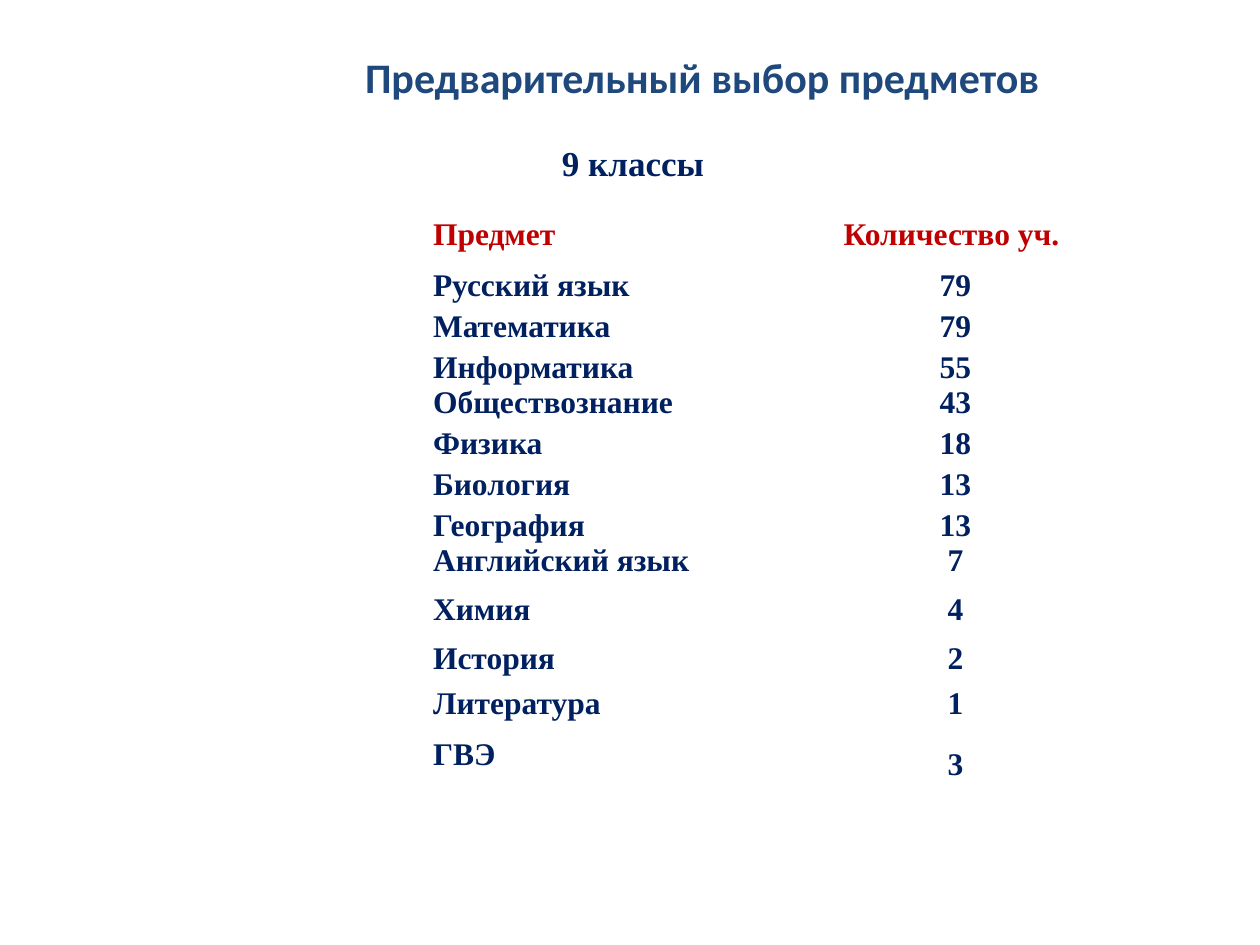
from pptx import Presentation
from pptx.dml.color import RGBColor
from pptx.enum.text import MSO_ANCHOR, PP_ALIGN
from pptx.util import Cm, Pt

LEFT, CENTER = PP_ALIGN.LEFT, PP_ALIGN.CENTER
MIDDLE, BOTTOM = MSO_ANCHOR.MIDDLE, MSO_ANCHOR.BOTTOM
COLORS = {"title": "1F497D", "header": "C00000", "body": "002060", "white": "FFFFFF"}


def style_text(para, font_name, size, color):
    para.font.name = font_name
    para.font.size = Pt(size)
    para.font.bold = True
    para.font.color.rgb = RGBColor.from_string(COLORS[color])


deck = Presentation()
deck.slide_width, deck.slide_height = Cm(25.4), Cm(19.05)
page = deck.slides.add_slide(deck.slide_layouts[6])

title_box = page.shapes.add_textbox(Cm(7.11), Cm(0.91), Cm(14.25), Cm(1.27))
title_box.text_frame.word_wrap = False
title = title_box.text_frame.paragraphs[0]
title.text = "Предварительный выбор предметов"
style_text(title, "Calibri", 24, "title")

rows = [
    (1.6, "9 классы", ""),
    (1.22, "Предмет", "Количество уч. "),
    (0.84, "Русский язык", "79"),
    (0.81, "Математика", "79"),
    (1.5, "Информатика\nОбществознание", "55\n43"),
    (0.84, "Физика", "18"),
    (0.81, "Биология", "13"),
    (1.5, "География\nАнглийский язык", "13\n7"),
    (1.14, "Химия", "4"),
    (0.84, "История", "2"),
    (0.94, "Литература", "1"),
    (1.14, "ГВЭ", "3"),
    (0.8, "", ""),
]
widths = [5, 8.1, 4.9]
table = page.shapes.add_table(
    len(rows), len(widths), Cm(3.71), Cm(2.51),
    Cm(sum(widths)), Cm(sum(row[0] for row in rows)),
).table
table.first_row = False
table.horz_banding = False
for column, width in zip(table.columns, widths):
    column.width = Cm(width)

for row_index, (height, subject, count) in enumerate(rows):
    table.rows[row_index].height = Cm(height)
    for column_index, text in enumerate(["", subject, count]):
        cell = table.cell(row_index, column_index)
        cell.fill.solid()
        cell.fill.fore_color.rgb = RGBColor.from_string(COLORS["white"])
        cell.margin_left = cell.margin_right = cell.margin_top = Cm(0.02)
        cell.margin_bottom = Cm(0)
        cell.vertical_anchor = BOTTOM if text == "3" else MIDDLE
        if not text:
            continue
        cell.text = text
        for para in cell.text_frame.paragraphs:
            para.alignment = CENTER if column_index == 2 or row_index == 0 else LEFT
            style_text(
                para, "Times New Roman", 20 if row_index == 0 else 18,
                "header" if row_index == 1 else "body",
            )

deck.save("out.pptx")
